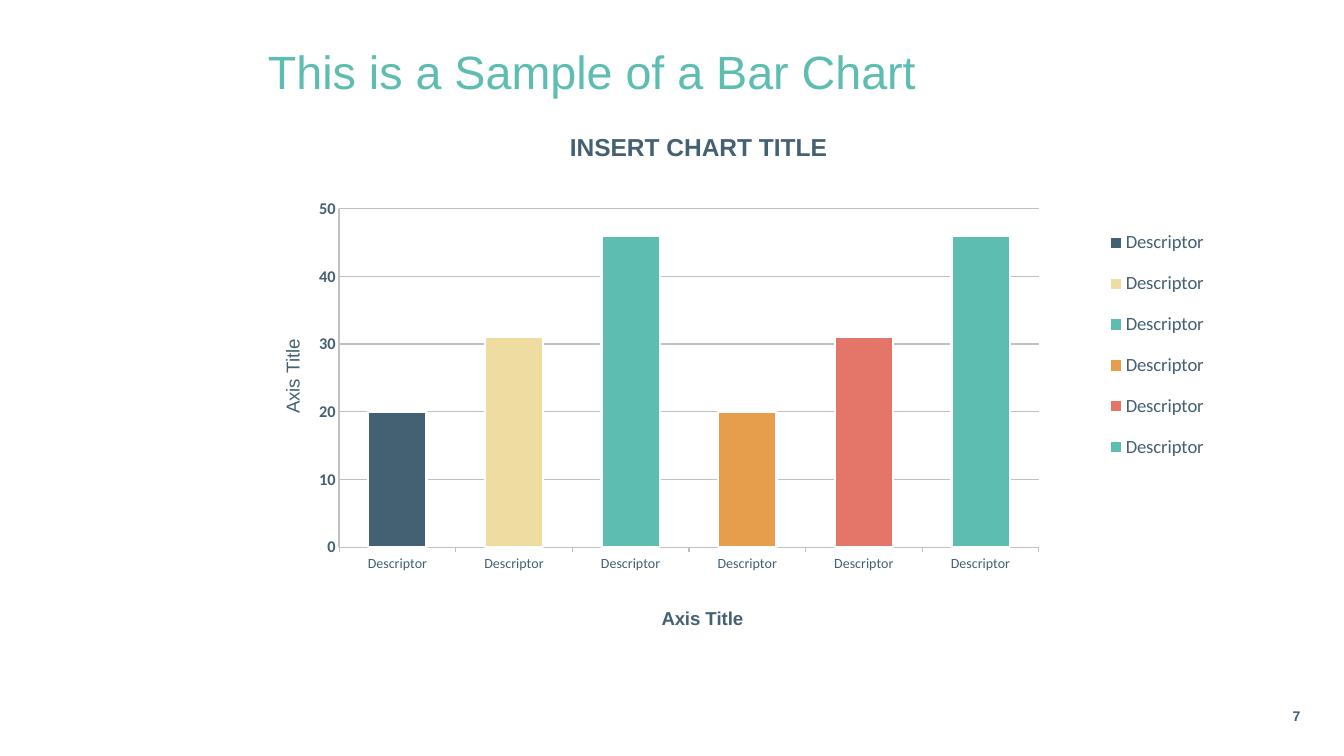
from lxml import etree
from pptx import Presentation
from pptx import util as u
from pptx.chart.data import CategoryChartData
from pptx.dml.color import RGBColor
from pptx.enum import chart as ch, text
from pptx.oxml.ns import qn

# Content
SLATE, TEAL, GREY, WHITE = "446073", "5EBDB1", "C0C0C0", "FFFFFF"
TITLE = "This is a Sample of a Bar Chart"
CHART_TITLE = "INSERT CHART TITLE"
AXIS_TITLE = "Axis Title"
PAGE_NUMBER = "7"
SERIES = "Item"
BARS = [  # label, value, colour
    ("Descriptor", 20, SLATE),
    ("Descriptor", 31, "EEDCA0"),
    ("Descriptor", 46, TEAL),
    ("Descriptor", 20, "E79E4C"),
    ("Descriptor", 31, "E37668"),
    ("Descriptor", 46, TEAL),
]

# Boxes in inches: left, top, width, height
TITLE_BOX = (3.19, 0.51, 12.31, 1.6)
HEADING_BOX = (3.3, 1.5, 10.03, 0.49)
CHART_BOX = (2.69, 1.98, 12.25, 5.6)
NUMBER_BOX = (14.88, 8.42, 0.6, 0.26)

# Places inside the chart, as shares of its size
PLOT = (0.11, 0.09, 0.68, 0.72)
LEGEND = (0.84, 0.1, 0.13, 0.56)
VALUE_TITLE = (0.05, 0.36)
CATEGORY_TITLE = (0.42, 0.93)


def rgb(code):
    return RGBColor.from_string(code)


def inches(box):
    return [u.Inches(length) for length in box]


def set_font(font, size, color=SLATE, bold=False, name="Arial"):
    font.name, font.size, font.bold = name, u.Pt(size), bold
    font.color.rgb = rgb(color)


def set_line(line, color, width):
    line.color.rgb, line.width = rgb(color), u.Pt(width)


def add_text(page, box, words, size, color, bold=False, align=text.PP_ALIGN.LEFT,
             anchor=text.MSO_ANCHOR.TOP, insets=(0, 0)):
    frame = page.shapes.add_textbox(*inches(box)).text_frame
    frame.word_wrap, frame.vertical_anchor = True, anchor
    frame.margin_left = frame.margin_right = u.Inches(insets[0])
    frame.margin_top = frame.margin_bottom = u.Inches(insets[1])
    para = frame.paragraphs[0]
    para.text, para.alignment = words, align
    set_font(para.font, size, color, bold)


def set_layout(element, follower, place, target=None):
    """Give a chart part a manual layout, just before its follower."""
    for old in element.findall(qn("c:layout")):
        element.remove(old)
    layout = etree.Element(qn("c:layout"))
    manual = etree.SubElement(layout, qn("c:manualLayout"))
    settings = [("layoutTarget", target)] if target else []
    settings += [("xMode", "edge"), ("yMode", "edge"), *zip("xywh", place)]
    for tag, value in settings:
        etree.SubElement(manual, qn("c:" + tag)).set("val", str(value))
    element.find(qn(follower)).addprevious(layout)


def style_axis(axis, size, bold, line_width, tick, title_bold, title_place):
    axis.major_tick_mark, axis.minor_tick_mark = tick, ch.XL_TICK_MARK.NONE
    set_font(axis.tick_labels.font, size, bold=bold, name="Calibri")
    set_line(axis.format.line, GREY, line_width)
    title = axis.axis_title
    para = title.text_frame.paragraphs[0]
    para.text = AXIS_TITLE
    set_font(para.font, 16, bold=title_bold)
    set_layout(title._element, "c:overlay", title_place)


def add_bar_chart(page):
    data = CategoryChartData()
    data.categories = [label for label, _, _ in BARS]
    data.add_series(SERIES, [value for _, value, _ in BARS])
    chart = page.shapes.add_chart(
        ch.XL_CHART_TYPE.COLUMN_CLUSTERED, *inches(CHART_BOX), data).chart
    chart.has_title = False
    set_font(chart.font, 16, bold=True, name="Calibri")

    # Bars
    plot = chart.plots[0]
    plot.gap_width, plot.vary_by_categories = 100, True
    for index, (_, _, color) in enumerate(BARS):
        bar = plot.series[0].points[index].format
        bar.fill.solid()
        bar.fill.fore_color.rgb = rgb(color)
        set_line(bar.line, WHITE, 2)
    plot_area = chart._chartSpace.find(".//" + qn("c:plotArea"))
    set_layout(plot_area, "c:barChart", PLOT, "inner")

    # Axes
    values = chart.value_axis
    values.minimum_scale, values.maximum_scale, values.major_unit = 0, 50, 10
    values.has_major_gridlines = True
    set_line(values.major_gridlines.format.line, GREY, 1)
    style_axis(values, 14, True, 2, ch.XL_TICK_MARK.NONE, False, VALUE_TITLE)
    turned = values.axis_title.text_frame._txBody.bodyPr
    turned.set("rot", "-5400000")
    turned.set("vert", "horz")
    style_axis(chart.category_axis, 12, False, 1, ch.XL_TICK_MARK.OUTSIDE,
               True, CATEGORY_TITLE)

    # Legend
    chart.has_legend = True
    legend = chart.legend
    legend.position = ch.XL_LEGEND_POSITION.RIGHT
    legend.include_in_layout = False
    set_font(legend.font, 16, name="Calibri")
    set_layout(legend._element, "c:overlay", LEGEND)


def main():
    deck = Presentation()
    deck.slide_width, deck.slide_height = u.Inches(16), u.Inches(9)
    page = deck.slides.add_slide(deck.slide_layouts[6])
    add_bar_chart(page)
    add_text(page, TITLE_BOX, TITLE, 40, TEAL)
    add_text(page, HEADING_BOX, CHART_TITLE, 21, SLATE, True,
             text.PP_ALIGN.CENTER, text.MSO_ANCHOR.BOTTOM, (0.14, 0.07))
    add_text(page, NUMBER_BOX, PAGE_NUMBER, 12, SLATE, True, text.PP_ALIGN.RIGHT)
    deck.save("out.pptx")


if __name__ == "__main__":
    main()
